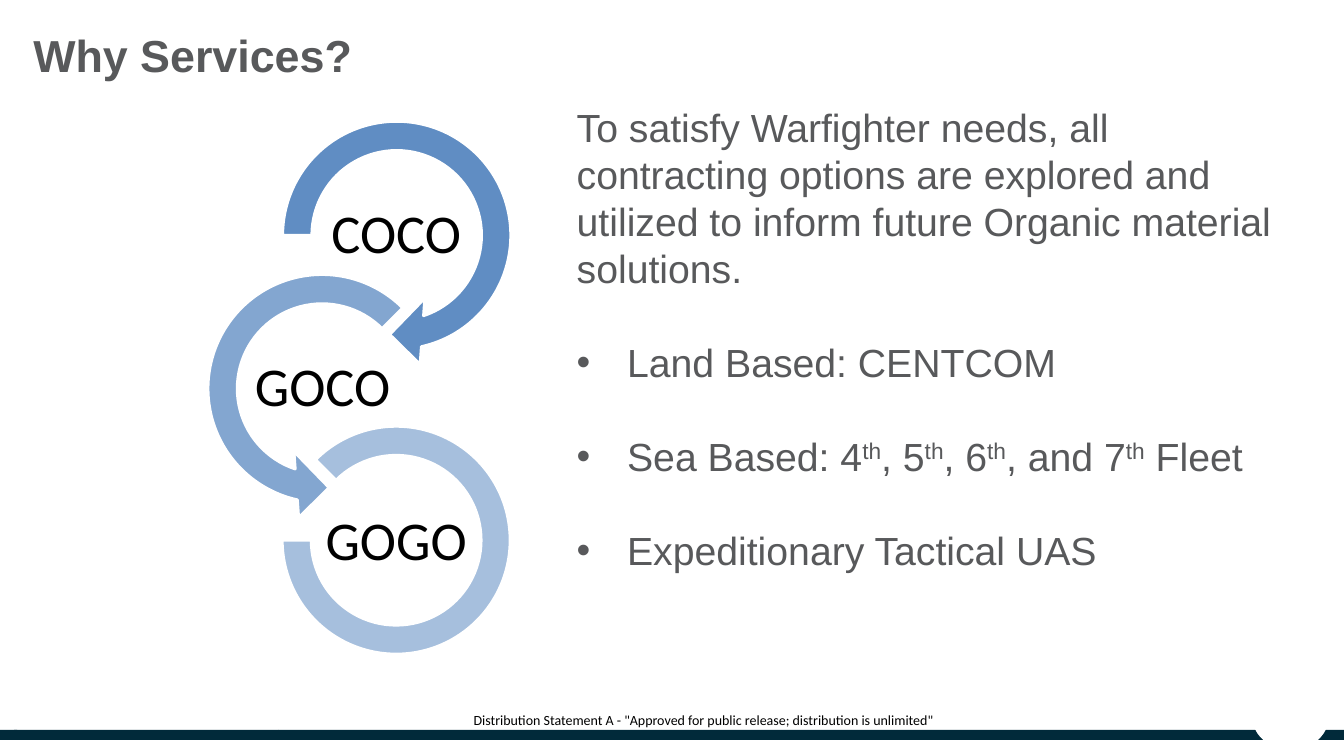
from lxml.etree import SubElement
from pptx import Presentation
from pptx.dml.color import RGBColor
from pptx.enum.shapes import MSO_SHAPE
from pptx.enum.text import MSO_ANCHOR, MSO_AUTO_SIZE, PP_ALIGN
from pptx.oxml.ns import qn
from pptx.util import Inches, Pt

GREY, BLUE, NAVY, WHITE, BLACK = "58595B", "4F81BD", "012A3A", "FFFFFF", "000000"
TITLE = "Why Services?"
LEAD = ("To satisfy Warfighter needs, all contracting options are explored and "
        "utilized to inform future Organic material solutions.")
# Odd parts, split at "^", are superscript
POINTS = ["Land Based: CENTCOM",
          "Sea Based: 4^th^, 5^th^, 6^th^, and 7^th^ Fleet",
          "Expeditionary Tactical UAS"]
NOTICE = 'Distribution Statement A - "Approved for public release; distribution is unlimited"'
# label, label left, shape, left, top, size, adjustments, opacity in percent
RINGS = [
    ("COCO", 3.2, MSO_SHAPE.CIRCULAR_ARROW, 2.62, 1.02, 2.63,
     (0.11, 11.42, 45, 108, 0.125), 90),
    ("GOCO", 2.47, MSO_SHAPE.LEFT_CIRCULAR_ARROW, 1.88, 2.54, 2.63,
     (0.11, 11.42, 63, 189, 0.125), 70),
    ("GOGO", 3.2, MSO_SHAPE.BLOCK_ARC, 2.8, 4.23, 2.26,
     (135, 108, 0.127), 50),
]
LABEL_TOP, LABEL_STEP = 1.97, 1.525
BAR_TOP, BAR_TALL, WIDE = 7.24, 0.1, 13.33


def color(code):
    return RGBColor.from_string(code)


def place(shape, *box):
    shape.left, shape.top, shape.width, shape.height = map(Inches, box)
    return shape


def write(para, text, size=28, font="Arial", fill=GREY, bold=False,
          align=PP_ALIGN.LEFT, line=1.0, before=0, after=0):
    para.alignment, para.line_spacing = align, line
    para.space_before, para.space_after = Pt(before), Pt(after)
    for i, part in enumerate(text.split("^")):
        run = para.add_run()
        run.text = part
        run.font.size, run.font.name, run.font.bold = Pt(size), font, bold
        run.font.color.rgb = color(fill)
        if i % 2:
            run.font._element.set("baseline", "30000")


def setup(shape, inset=0, anchor=MSO_ANCHOR.TOP, wrap=True):
    frame = shape.text_frame
    frame.word_wrap, frame.auto_size = wrap, MSO_AUTO_SIZE.NONE
    frame.vertical_anchor = anchor
    frame.margin_left = frame.margin_right = Inches(inset)
    frame.margin_top = frame.margin_bottom = Inches(inset)
    return frame


def bullet(para, char=None):
    """Set a hanging bullet, or remove the inherited one."""
    props = para._p.get_or_add_pPr()
    hang = Inches(0.5) if char else 0
    props.set("marL", str(hang))
    props.set("indent", str(-hang))
    if char:
        SubElement(props, qn("a:buFont"), typeface="Arial")
        SubElement(props, qn("a:buChar"), char=char)
    else:
        SubElement(props, qn("a:buNone"))


def draw(kind, box, fill, alpha=100, edge=0):
    shape = place(slide.shapes.add_shape(kind, 0, 0, 0, 0), *box)
    shape.shadow.inherit = False
    shape.fill.solid()
    shape.fill.fore_color.rgb = color(fill)
    if alpha < 100:
        tint = shape.fill._xPr.find(".//" + qn("a:srgbClr"))
        SubElement(tint, qn("a:alpha"), val=str(alpha * 1000))
    if edge:
        shape.line.color.rgb, shape.line.width = color(WHITE), Pt(edge)
    else:
        shape.line.fill.background()
    return shape


deck = Presentation()
deck.slide_width, deck.slide_height = Inches(WIDE), Inches(7.5)
slide = deck.slides.add_slide(deck.slide_layouts[1])

# Footer band
for left, right in ((0, 0.17), (0.14, 2.76), (2.76, WIDE)):
    draw(MSO_SHAPE.RECTANGLE, (left, BAR_TOP, right - left, BAR_TALL), NAVY)
draw(MSO_SHAPE.OVAL, (12.42, 6.78, 0.76, 0.66), WHITE)

# Chain of rings
for i, (label, x, kind, left, top, size, adjust, alpha) in enumerate(RINGS):
    ring = draw(kind, (left, top, size, size), BLUE, alpha, edge=2)
    for n, value in enumerate(adjust):
        ring.adjustments[n] = value
    box = slide.shapes.add_textbox(0, 0, 0, 0)
    place(box, x, LABEL_TOP + i * LABEL_STEP, 1.46, 0.73)
    frame = setup(box, 0.03, MSO_ANCHOR.MIDDLE, wrap=False)
    write(frame.paragraphs[0], label, size=39, font="Calibri", fill=BLACK,
          align=PP_ALIGN.CENTER, line=0.9)

# Title, body and notice
title = place(slide.shapes.title, 0.33, 0.27, 12.33, 0.54)
write(setup(title, anchor=MSO_ANCHOR.BOTTOM).paragraphs[0], TITLE, size=32, bold=True)

body = setup(place(slide.placeholders[1], 5.72, 1.02, 6.94, 4.71))
bullet(body.paragraphs[0])
write(body.paragraphs[0], LEAD)
for point in POINTS:
    para = body.add_paragraph()
    bullet(para, "•")
    write(para, point, before=33.6)

notice = place(slide.shapes.add_textbox(0, 0, 0, 0), 3.05, 7.01, 7.85, 0.27)
write(setup(notice, 0.05).paragraphs[0], NOTICE, size=10, font="Calibri",
      fill=BLACK, align=PP_ALIGN.CENTER)

deck.save("out.pptx")
